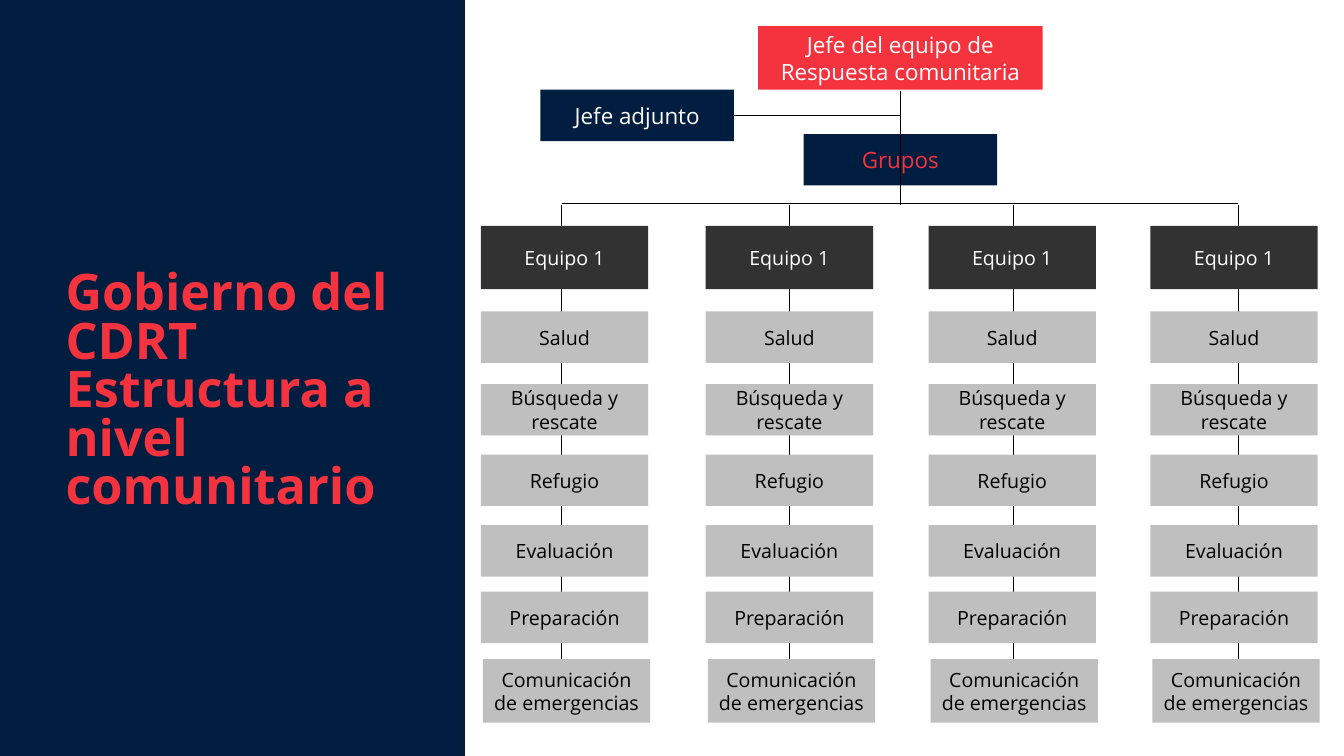
import pptx
import pptx.util
import pptx.dml.color
import pptx.enum.shapes
import pptx.enum.text
import pptx.oxml.ns
from lxml import etree

PX = 9144  # EMU, 100 px to the inch
FONT = "Open Sans"
COLORS = {
    "navy": "011E41",
    "red": "F5333F",
    "dark": "323232",
    "grey": "BFBFBF",
    "black": "000000",
    "white": "FFFFFF",
}

# Left edge of the boxes and x of the stem, for each team
TEAMS = [(477, 557), (700, 783), (921, 1005), (1141, 1228)]
# Text, top, height, shift to the right
TASKS = [
    ("Salud", 309, 51, 0),
    ("Búsqueda y rescate", 381, 51, 0),
    ("Refugio", 451, 51, 0),
    ("Evaluación", 521, 51, 0),
    ("Preparación", 587, 51, 0),
    ("Comunicación de emergencias", 654, 63, 2),
]
TEAM_W = 166
RAIL_Y = 202
TRUNK_X = 893


def color(name):
    return pptx.dml.color.RGBColor.from_string(COLORS[name])


def put_text(shape, text, size=14, ink="black", bold=False, align="CENTER", lead=None):
    frame = shape.text_frame
    frame.word_wrap = True
    frame.auto_size = pptx.enum.text.MSO_AUTO_SIZE.NONE
    frame.vertical_anchor = pptx.enum.text.MSO_ANCHOR.MIDDLE
    para = frame.paragraphs[0]
    para.text = text
    para.alignment = pptx.enum.text.PP_ALIGN[align]
    if lead:
        para.line_spacing = lead
    for run in para.runs:
        run.font.name = FONT
        run.font.size = pptx.util.Pt(size)
        run.font.bold = bold
        run.font.color.rgb = color(ink)


def add_box(slide, x, y, w, h, fill, text="", **style):
    box = slide.shapes.add_shape(
        pptx.enum.shapes.MSO_SHAPE.RECTANGLE, x * PX, y * PX, w * PX, h * PX)
    box.shadow.inherit = False
    box.fill.solid()
    box.fill.fore_color.rgb = color(fill)
    box.line.fill.background()
    if text:
        put_text(box, text, **style)
    return box


def add_line(slide, x1, y1, x2, y2):
    line = slide.shapes.add_connector(
        pptx.enum.shapes.MSO_CONNECTOR.STRAIGHT, x1 * PX, y1 * PX, x2 * PX, y2 * PX)
    line.line.color.rgb = color("black")
    line.line.width = pptx.util.Pt(0.75)
    etree.SubElement(line._element.spPr, pptx.oxml.ns.qn("a:effectLst"))


def add_title(slide):
    title = slide.shapes.title
    title.left, title.top = 55 * PX, 144 * PX
    title.width, title.height = 406 * PX, 492 * PX
    put_text(title, "Gobierno del CDRT \vEstructura a nivel comunitario",
             size=36, ink="red", bold=True, align="LEFT", lead=0.8)
    panel = add_box(slide, 0, -1, 461, 751, "navy")
    title._element.addprevious(panel._element)  # panel goes behind the title


def add_team(slide, left, stem):
    add_line(slide, stem, RAIL_Y + 1, stem, 676)
    add_box(slide, left, 224, TEAM_W, 63, "dark", "Equipo 1", ink="white")
    for text, top, height, shift in TASKS:
        add_box(slide, left + shift, top, TEAM_W, height, "grey", text)


def add_heads(slide):
    add_box(slide, 536, 89, 192, 51, "navy", "Jefe adjunto", size=16, ink="white")
    add_box(slide, 752, 26, 282, 63, "red",
            "Jefe del equipo de Respuesta comunitaria", size=16, ink="white")
    add_box(slide, 797, 133, 192, 51, "navy", "Grupos", size=16, ink="red")
    add_line(slide, TRUNK_X, 90, TRUNK_X, RAIL_Y + 1)
    add_line(slide, TEAMS[0][1], RAIL_Y, TEAMS[-1][1], RAIL_Y)
    add_line(slide, 728, 115, TRUNK_X, 115)


def main():
    deck = pptx.Presentation()
    deck.slide_width, deck.slide_height = 1333 * PX, 750 * PX
    slide = deck.slides.add_slide(deck.slide_layouts[5])
    add_title(slide)
    for left, stem in TEAMS:
        add_team(slide, left, stem)
    add_heads(slide)
    deck.save("out.pptx")


if __name__ == "__main__":
    main()
